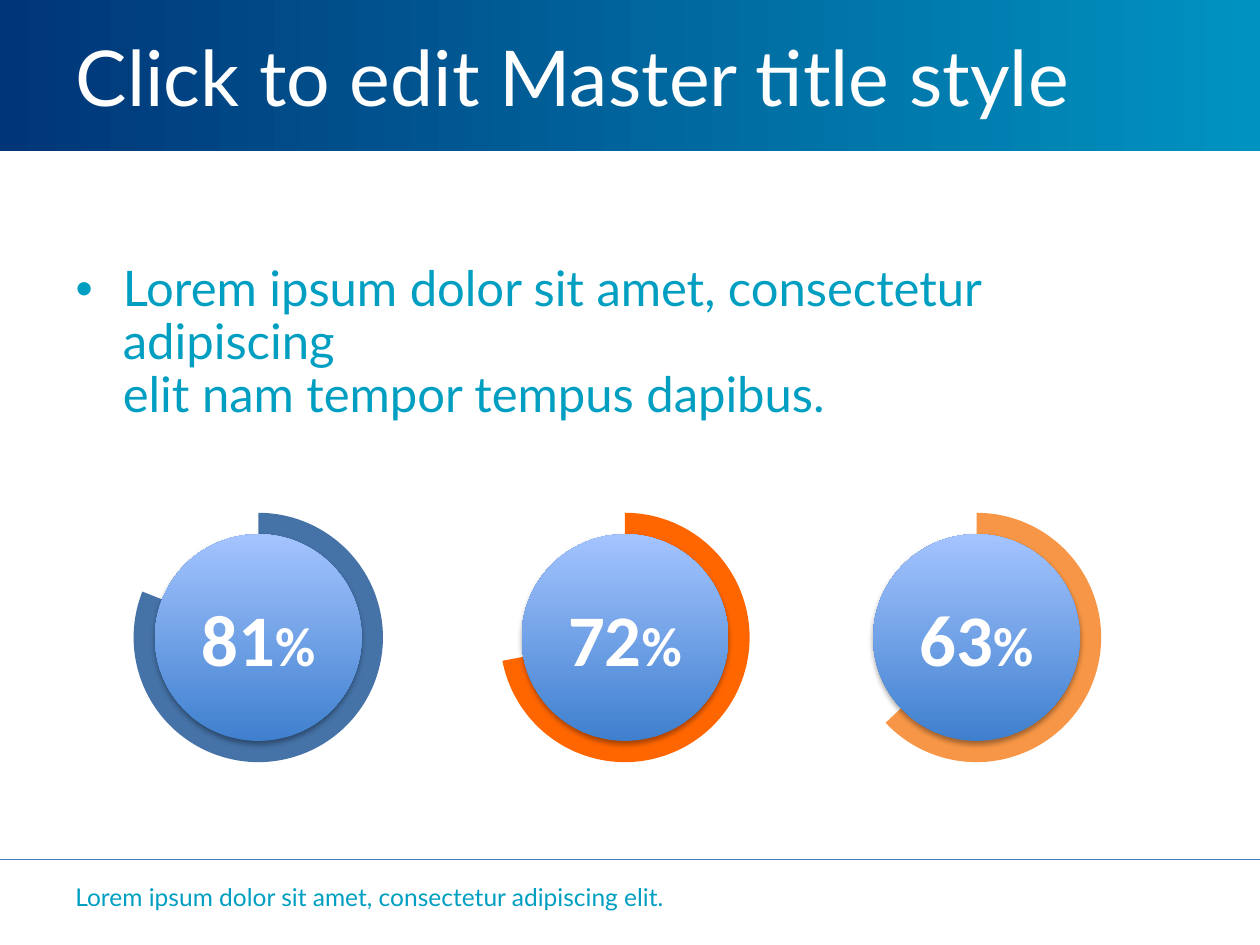
from dataclasses import dataclass

from lxml import etree
from pptx import Presentation
from pptx.chart.data import CategoryChartData
from pptx.dml.color import RGBColor
from pptx.enum.chart import XL_CHART_TYPE
from pptx.enum.shapes import MSO_CONNECTOR, MSO_SHAPE
from pptx.enum.text import MSO_ANCHOR, MSO_AUTO_SIZE, PP_ALIGN
from pptx.oxml import parse_xml
from pptx.oxml.ns import nsdecls, qn
from pptx.util import Inches, Pt

PIE = XL_CHART_TYPE.PIE
STRAIGHT = MSO_CONNECTOR.STRAIGHT
RECT, OVAL = MSO_SHAPE.RECTANGLE, MSO_SHAPE.OVAL
TOP, MIDDLE = MSO_ANCHOR.TOP, MSO_ANCHOR.MIDDLE
NO_FIT = MSO_AUTO_SIZE.NONE
LEFT, CENTER = PP_ALIGN.LEFT, PP_ALIGN.CENTER

# The slide is a grid of 10 columns by 7.5 rows of square cells
COLS, ROWS = 10, 7.5
CELL = Inches(1)
MARGIN, HEADER = 0.5, 1.2
GAUGE_ROW, CHART_W, CHART_H = 5.06, 3.39, 2.26
PIE_D, DISC_D = 1.98, 1.64
WHITE, TEAL = "FFFFFF", "009FC2"


@dataclass
class Gauge:
    percent: int
    col: float  # centre of the ring
    color: str


GAUGES = [Gauge(81, 2.05, "4572A7"), Gauge(72, 4.96, "FF6600"), Gauge(63, 7.75, "F79646")]


def rgb(color: str) -> RGBColor:
    return RGBColor.from_string(color)


def box(left: float, top: float, width: float, height: float) -> list[int]:
    return [round(v * CELL) for v in (left, top, width, height)]


def centred(col: float, row: float, width: float, height: float) -> list[int]:
    return box(col - width / 2, row - height / 2, width, height)


def style(r, size: float, color: str, name: str = "Lato", bold: bool = False) -> None:
    f = r.font
    f.size, f.name, f.bold = Pt(size), name, bold
    f.color.rgb = rgb(color)


def write(sp, text: str, size: float, color: str, anchor=TOP) -> None:
    tf = sp.text_frame
    tf.text, tf.word_wrap, tf.auto_size = text, True, NO_FIT
    tf.vertical_anchor = anchor
    p = tf.paragraphs[0]
    p.alignment, p.space_before = LEFT, Pt(0)
    for r in p.runs:
        style(r, size, color)


def place(sp, area: list[int]) -> None:
    sp.left, sp.top, sp.width, sp.height = area


def gradient_shape(slide, kind, area: list[int], colors: tuple[str, str], angle: float):
    sp = slide.shapes.add_shape(kind, *area)
    sp.shadow.inherit = False
    sp.line.fill.background()
    sp.fill.gradient()
    sp.fill.gradient_angle = angle
    for stop, color in zip(sp.fill.gradient_stops, colors):
        stop.color.rgb = rgb(color)
    return sp


def add_ring(slide, gauge: Gauge) -> None:
    data = CategoryChartData()
    data.categories = ["1", "2"]
    data.add_series("Series 1", (gauge.percent, 100 - gauge.percent))
    area = centred(gauge.col, GAUGE_ROW, CHART_W, CHART_H)
    chart = slide.shapes.add_chart(PIE, *area, data).chart
    chart.has_legend = chart.has_title = False
    chart.font.size, chart.font.name = Pt(18), "Calibri"
    chart.font.color.rgb = rgb("000000")
    plot = chart.plots[0]
    plot.vary_by_categories = False
    points = plot.series[0].points
    points[0].format.fill.solid()
    points[0].format.fill.fore_color.rgb = rgb(gauge.color)
    points[1].format.fill.background()
    for point in (points[0], points[1]):
        point.format.line.fill.background()

    # Start at twelve o'clock and centre the pie in its frame
    pie = chart.element.find(".//" + qn("c:pieChart"))
    for old in pie.findall(qn("c:firstSliceAng")):
        pie.remove(old)
    etree.SubElement(pie, qn("c:firstSliceAng")).set("val", "0")
    area_xml = pie.getparent()
    for old in area_xml.findall(qn("c:layout")):
        area_xml.remove(old)
    w, h = PIE_D / CHART_W, PIE_D / CHART_H
    settings = [("layoutTarget", "inner"), ("xMode", "edge"), ("yMode", "edge"),
                ("x", (1 - w) / 2), ("y", (1 - h) / 2), ("w", w), ("h", h)]
    layout = etree.Element(qn("c:layout"))
    manual = etree.SubElement(layout, qn("c:manualLayout"))
    for tag, val in settings:
        etree.SubElement(manual, qn("c:" + tag)).set("val", str(val))
    area_xml.insert(0, layout)


def add_disc(slide, gauge: Gauge) -> None:
    area = centred(gauge.col, GAUGE_ROW, DISC_D, DISC_D)
    sp = gradient_shape(slide, OVAL, area, ("3F80CE", "A4C4FF"), 90)
    sp._element.spPr.find(qn("a:effectLst")).append(parse_xml(
        f'<a:outerShdw {nsdecls("a")} blurRad="{Pt(3.1)}" dist="{Pt(1.8)}" dir="5400000" '
        'rotWithShape="0"><a:srgbClr val="000000"><a:alpha val="35000"/></a:srgbClr></a:outerShdw>'))
    tf = sp.text_frame
    tf.word_wrap, tf.vertical_anchor = False, MIDDLE
    p = tf.paragraphs[0]
    p.alignment = CENTER
    for text, size in ((str(gauge.percent), 41.5), ("%", 31.5)):
        r = p.add_run()
        r.text = text
        style(r, size, WHITE, "Calibri", True)


def add_backdrop(slide) -> None:
    band = gradient_shape(slide, RECT, box(0, -0.01, COLS, HEADER + 0.01), ("003678", "0093C0"), 0)
    rule = slide.shapes.add_connector(STRAIGHT, *box(0, 6.82, COLS, 6.82))
    rule.line.color.rgb, rule.line.width = rgb("4B7EBC"), Pt(0.75)
    etree.SubElement(rule._element.spPr, qn("a:effectLst"))
    # Send both behind the placeholders
    for sp in (band, rule):
        slide.shapes._spTree.insert(2, sp._element)


def main() -> None:
    prs = Presentation()
    prs.slide_width, prs.slide_height = round(COLS * CELL), round(ROWS * CELL)
    slide = prs.slides.add_slide(prs.slide_layouts[1])
    add_backdrop(slide)

    # Title and list
    title, body = slide.placeholders
    text_w = COLS - 2 * MARGIN
    place(title, box(MARGIN, 0, text_w, HEADER))
    write(title, "Click to edit Master title style", 44, WHITE, MIDDLE)
    place(body, box(MARGIN, 2.05, text_w, 4.51))
    write(body, "Lorem ipsum dolor sit amet, consectetur adipiscing \v"
                "elit nam tempor tempus dapibus.", 28, TEAL)
    body.text_frame.paragraphs[0].line_spacing = 0.9

    # Percentage gauges
    for gauge in GAUGES:
        add_ring(slide, gauge)
        add_disc(slide, gauge)

    # Footer
    footer = slide.shapes.add_textbox(*box(MARGIN, 6.95, 7.46, 0.55))
    write(footer, "Lorem ipsum dolor sit amet, consectetur adipiscing elit.", 14, TEAL)
    prs.save("out.pptx")


if __name__ == "__main__":
    main()
